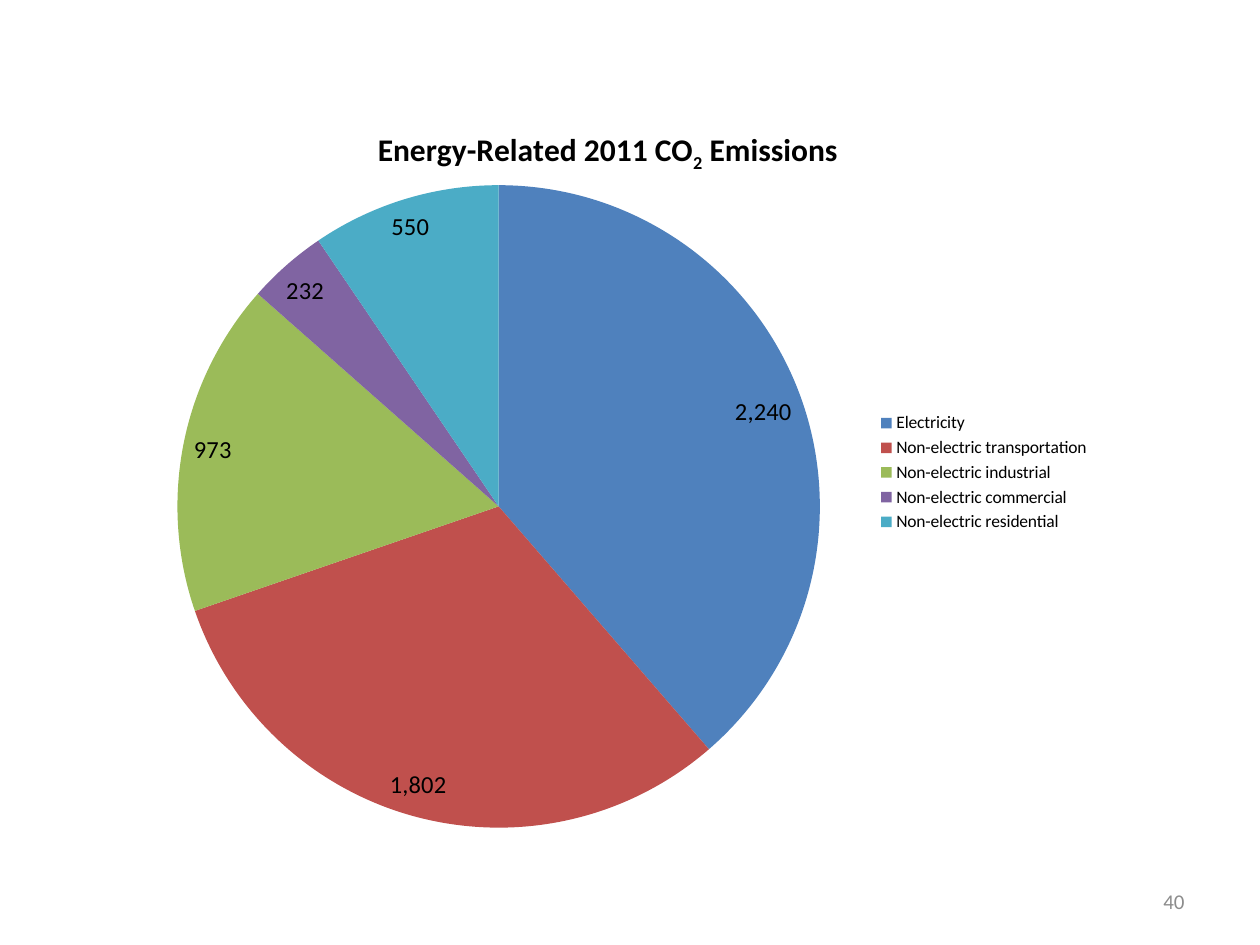
from lxml.etree import SubElement
from pptx import Presentation
from pptx.chart.data import CategoryChartData
from pptx.dml.color import RGBColor
from pptx.enum.chart import XL_CHART_TYPE, XL_LABEL_POSITION, XL_LEGEND_POSITION
from pptx.enum.text import MSO_ANCHOR, PP_ALIGN
from pptx.oxml.ns import qn
from pptx.util import Inches, Pt

FONT = "Calibri"
TITLE = [("Energy-Related 2011 CO", False), ("2", True), (" Emissions", False)]
EMISSIONS = [
    ("Electricity", 2240, "4F81BD"),
    ("Non-electric transportation", 1802, "C0504D"),
    ("Non-electric industrial", 973, "9BBB59"),
    ("Non-electric commercial", 232, "8064A2"),
    ("Non-electric residential", 550, "4BACC6"),
]
PAGE_NUMBER = "40"


def style(font, size, color, bold=False):
    font.name, font.size, font.bold = FONT, Pt(size), bold
    font.color.rgb = RGBColor.from_string(color)


def place(parent, index, **fractions):
    """Give a chart part a manual layout in fractions of the chart area."""
    for old in parent.findall(qn("c:layout")):
        parent.remove(old)
    layout = SubElement(parent, qn("c:layout"))
    parent.insert(index, layout)
    manual = SubElement(layout, qn("c:manualLayout"))
    if "w" in fractions:
        SubElement(manual, qn("c:layoutTarget")).set("val", "inner")
    for mode in ("xMode", "yMode"):
        SubElement(manual, qn(f"c:{mode}")).set("val", "edge")
    for name, value in fractions.items():
        SubElement(manual, qn(f"c:{name}")).set("val", str(value))


def add_title(chart):
    title = chart.chart_title
    para = title.text_frame.paragraphs[0]
    style(para.font, 18, "000000", bold=True)
    for text, subscript in TITLE:
        span = para.add_run()
        span.text = text
        style(span.font, 18, "000000", bold=True)
        if subscript:
            span.font._element.set("baseline", "-25000")
    place(title._element, 1, x=0.27, y=0.04)


def add_pie(page):
    names, values, colors = zip(*EMISSIONS)
    data = CategoryChartData(number_format="#,##0")
    data.categories = names
    data.add_series("Series 1", values)
    frame = page.shapes.add_chart(
        XL_CHART_TYPE.PIE, Inches(0.83), Inches(0.75), Inches(7.92), Inches(6), data)
    chart = frame.chart
    style(chart.font, 10, "000000")
    add_title(chart)
    chart.has_legend = True
    chart.legend.position = XL_LEGEND_POSITION.RIGHT
    chart.legend.include_in_layout = False

    plot = chart.plots[0]
    plot.vary_by_categories = True
    for index, color in enumerate(colors):
        fill = plot.series[0].points[index].format.fill
        fill.solid()
        fill.fore_color.rgb = RGBColor.from_string(color)
    plot.has_data_labels = True
    labels = plot.data_labels
    labels.show_value = True
    labels.number_format = "#,##0"
    labels.number_format_is_linked = False
    labels.position = XL_LABEL_POSITION.BEST_FIT
    style(labels.font, 14, "000000")
    plot_area = chart._chartSpace.find(".//" + qn("c:plotArea"))
    place(plot_area, 0, x=0.07, y=0.12, w=0.65, h=0.85)


def add_page_number(page):
    box = page.shapes.add_textbox(Inches(7.17), Inches(6.95), Inches(2.33), Inches(0.4))
    box.text_frame.word_wrap = True
    box.text_frame.vertical_anchor = MSO_ANCHOR.MIDDLE
    para = box.text_frame.paragraphs[0]
    para.text = PAGE_NUMBER
    para.alignment = PP_ALIGN.RIGHT
    style(para.font, 12, "8C8C8C")


def main():
    deck = Presentation()
    deck.slide_width, deck.slide_height = Inches(10), Inches(7.5)
    page = deck.slides.add_slide(deck.slide_layouts[6])
    add_page_number(page)
    add_pie(page)
    deck.save("out.pptx")


if __name__ == "__main__":
    main()
